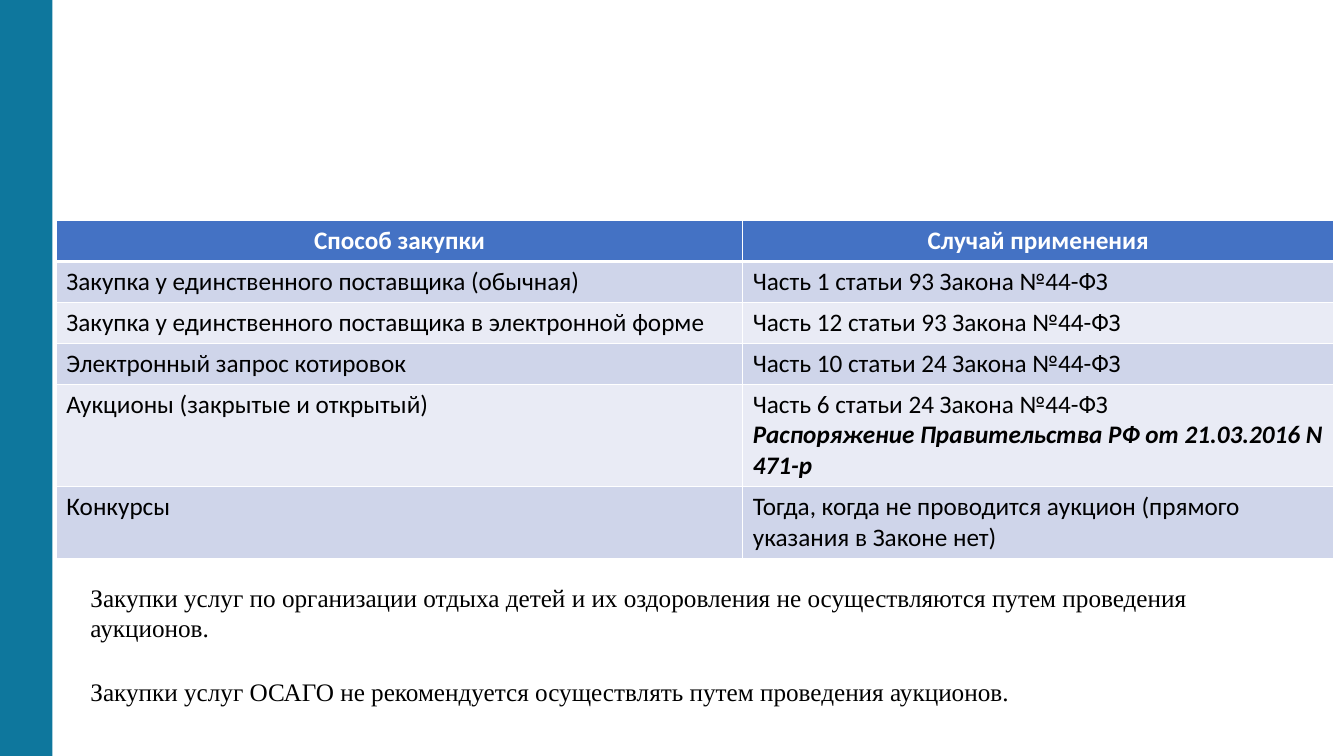
from dataclasses import dataclass

from pptx import Presentation
from pptx.dml.color import RGBColor
from pptx.enum.shapes import MSO_SHAPE as Preset
from pptx.enum.text import MSO_AUTO_SIZE as AutoSize, PP_ALIGN as Align
from pptx.oxml import parse_xml
from pptx.oxml.ns import nsdecls
from pptx.slide import Slide
from pptx.table import _Cell as Cell
from pptx.text.text import _Paragraph as Paragraph
from pptx.util import Cm, Pt

COLORS = {
    "sidebar": "0E779D",
    "header": "4472C4",
    "odd_row": "CFD5EA",
    "even_row": "E9EBF5",
    "white": "FFFFFF",
    "black": "000000",
}


@dataclass(frozen=True)
class Method:
    name: str
    case: str
    decree: str = ""


@dataclass(frozen=True)
class Note:
    text: str
    top: float
    height: float


HEADER = Method("Способ закупки", "Случай применения")
METHODS = [
    Method("Закупка у единственного поставщика (обычная)", "Часть 1 статьи 93 Закона №44-ФЗ"),
    Method("Закупка у единственного поставщика в электронной форме", "Часть 12 статьи 93 Закона №44-ФЗ"),
    Method("Электронный запрос котировок", "Часть 10 статьи 24 Закона №44-ФЗ"),
    Method(
        "Аукционы (закрытые и открытый)",
        "Часть 6 статьи 24 Закона №44-ФЗ",
        "Распоряжение Правительства РФ от 21.03.2016 N 471-р",
    ),
    Method("Конкурсы", "Тогда, когда не проводится аукцион (прямого указания в Законе нет)"),
]
NOTES = [
    Note(
        "Закупки услуг по организации отдыха детей и их оздоровления "
        "не осуществляются путем проведения аукционов.",
        14.55,
        1.8,
    ),
    Note("Закупки услуг ОСАГО не рекомендуется осуществлять путем проведения аукционов.", 16.92, 1.02),
]
COLUMN_WIDTHS = (17.3, 14.89)
ROW_HEIGHT = 1.03


def color(name: str) -> RGBColor:
    return RGBColor.from_string(COLORS[name])


def add_text(
    paragraph: Paragraph,
    text: str,
    font_name: str = "Calibri",
    color_name: str = "black",
    bold: bool = False,
    italic: bool = False,
) -> None:
    run = paragraph.add_run()
    run.text = text
    font = run.font
    font.name, font.size, font.bold, font.italic = font_name, Pt(18), bold, italic
    font.color.rgb = color(color_name)


def style_cell(cell: Cell, fill_name: str, top: float, bottom: float) -> None:
    properties = cell._tc.get_or_add_tcPr()
    for side, width in (("L", 1), ("R", 1), ("T", top), ("B", bottom)):
        properties.append(parse_xml(
            f'<a:ln{side} {nsdecls("a")} w="{Pt(width)}"><a:solidFill>'
            f'<a:srgbClr val="{COLORS["white"]}"/></a:solidFill></a:ln{side}>'
        ))
    cell.fill.solid()
    cell.fill.fore_color.rgb = color(fill_name)


def add_sidebar(slide: Slide, height: int) -> None:
    sidebar = slide.shapes.add_shape(Preset.RECTANGLE, 0, 0, Cm(1.32), height)
    sidebar.shadow.inherit = False
    sidebar.fill.solid()
    sidebar.fill.fore_color.rgb = color("sidebar")
    sidebar.line.fill.background()


def add_methods_table(slide: Slide) -> None:
    rows = [HEADER, *METHODS]
    table = slide.shapes.add_table(
        len(rows), len(COLUMN_WIDTHS), Cm(1.42), Cm(5.56),
        Cm(sum(COLUMN_WIDTHS)), Cm(ROW_HEIGHT * len(rows)),
    ).table
    for column, width in zip(table.columns, COLUMN_WIDTHS):
        column.width = Cm(width)
    for row_index, method in enumerate(rows):
        table.rows[row_index].height = Cm(ROW_HEIGHT)
        is_header = row_index == 0
        fill_name = "header" if is_header else "odd_row" if row_index % 2 else "even_row"
        for column_index, text in enumerate((method.name, method.case)):
            cell = table.cell(row_index, column_index)
            style_cell(cell, fill_name, 3 if row_index == 1 else 1, 3 if is_header else 1)
            paragraph = cell.text_frame.paragraphs[0]
            paragraph.alignment = Align.CENTER if is_header else Align.LEFT
            add_text(paragraph, text, color_name="white" if is_header else "black", bold=is_header)
        if method.decree:
            decree = table.cell(row_index, 1).text_frame.add_paragraph()
            add_text(decree, method.decree, bold=True, italic=True)


def add_note(slide: Slide, note: Note) -> None:
    box = slide.shapes.add_textbox(Cm(2.03), Cm(note.top), Cm(29.59), Cm(note.height))
    frame = box.text_frame
    frame.word_wrap = True
    frame.auto_size = AutoSize.SHAPE_TO_FIT_TEXT
    add_text(frame.paragraphs[0], note.text, "Times New Roman")


def main() -> None:
    presentation = Presentation()
    presentation.slide_width, presentation.slide_height = Cm(33.87), Cm(19.05)
    slide = presentation.slides.add_slide(presentation.slide_layouts[6])
    add_sidebar(slide, presentation.slide_height)
    add_methods_table(slide)
    for note in NOTES:
        add_note(slide, note)
    presentation.save("out.pptx")


if __name__ == "__main__":
    main()
